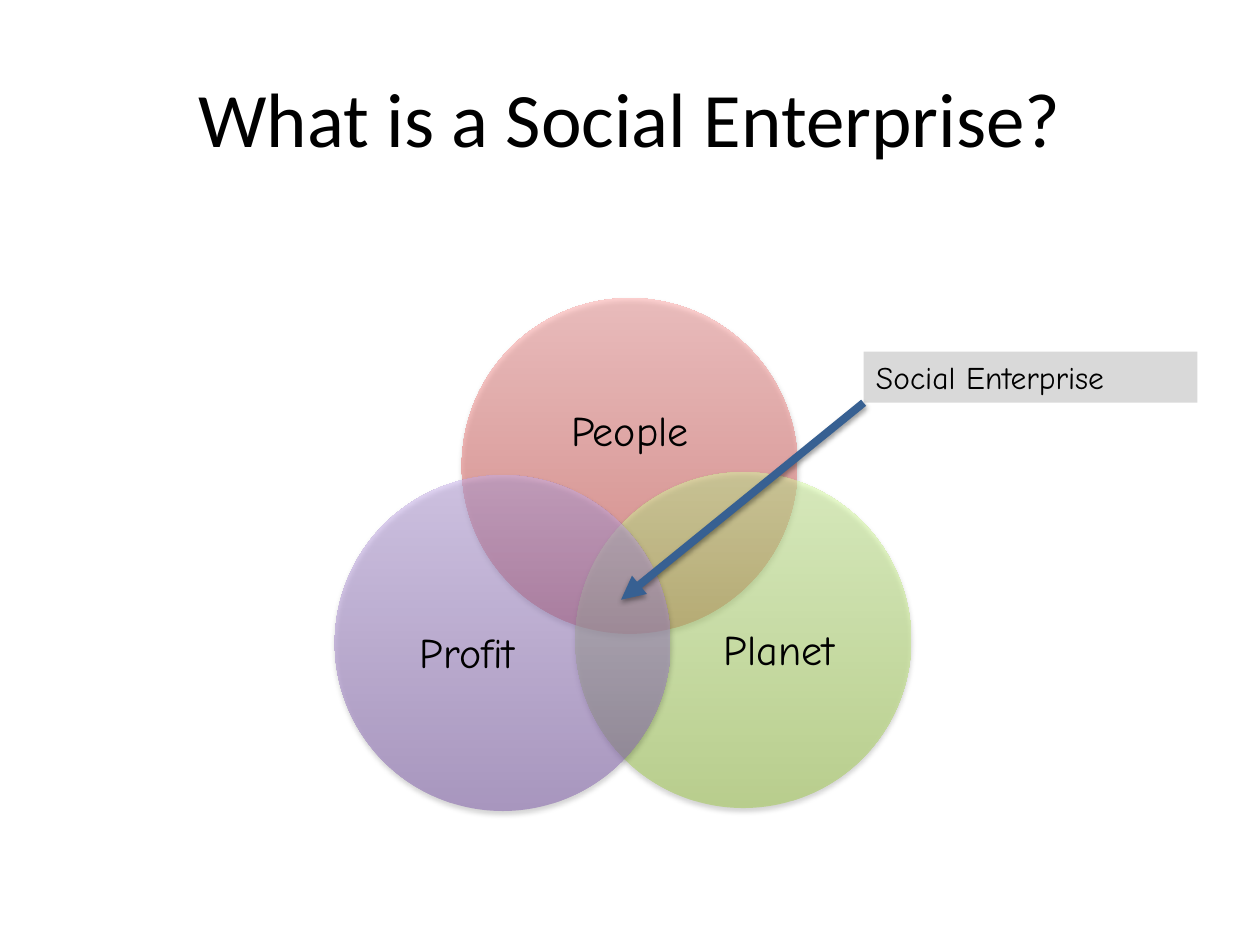
from dataclasses import dataclass

from pptx import Presentation
from pptx.dml.color import RGBColor
from pptx.enum.shapes import MSO_CONNECTOR as Connector, MSO_SHAPE as Shape
from pptx.enum.text import MSO_ANCHOR as Anchor, MSO_AUTO_SIZE as AutoSize, PP_ALIGN as Align
from pptx.oxml import parse_xml
from pptx.oxml.ns import nsdecls
from pptx.util import Cm, Pt

COLORS = {
    "text": "000000",
    "people_dark": "D1403C", "people_light": "FFA6A5",
    "planet_dark": "A0CA4A", "planet_light": "DAFFA5",
    "profit_dark": "7F5BAB", "profit_light": "C8B0ED",
    "callout": "D9D9D9",
    "arrow": "376092",
}
BODY_FONT = "Comic Neue"
DIAMETER = 6.77


@dataclass
class Box:
    left: float
    top: float
    width: float
    height: float

    def lengths(self) -> tuple:
        return Cm(self.left), Cm(self.top), Cm(self.width), Cm(self.height)


@dataclass
class Circle:
    name: str
    left: float
    top: float
    label: Box


# Back to front
CIRCLES = [
    Circle("People", 9.31, 6.01, Box(10.21, 7.2, 4.98, 3.05)),
    Circle("Planet", 11.6, 9.52, Box(13.68, 11.28, 4.06, 3.73)),
    Circle("Profit", 6.75, 9.58, Box(7.39, 11.33, 4.06, 3.73)),
]
CALLOUT = Box(17.41, 7.09, 6.73, 1.03)
CENTER = (12.52, 12.09)


def color(name: str) -> RGBColor:
    return RGBColor.from_string(COLORS[name])


def add_run(paragraph, text: str, size: float, font: str) -> None:
    run = paragraph.add_run()
    run.text = text
    run.font.size = Pt(size)
    run.font.name = font
    run.font.color.rgb = color("text")


def shadow_xml(opacity: int, distance: float):
    return parse_xml(
        f'<a:effectLst {nsdecls("a")}>'
        f'<a:outerShdw blurRad="{Pt(3.1)}" dist="{Pt(distance)}" dir="5400000" rotWithShape="0">'
        f'<a:srgbClr val="000000"><a:alpha val="{opacity * 1000}"/></a:srgbClr>'
        '</a:outerShdw></a:effectLst>')


def add_circle(slide, circle: Circle) -> None:
    box = Box(circle.left, circle.top, DIAMETER, DIAMETER)
    shape = slide.shapes.add_shape(Shape.OVAL, *box.lengths())
    shape.fill.gradient()
    shape.fill.gradient_angle = 90
    for stop, position, tone in zip(shape.fill.gradient_stops, (0, 1), ("dark", "light")):
        stop.position = position
        stop.color.rgb = color(f"{circle.name.lower()}_{tone}")
    for rgb in shape.fill._xPr.iter("{*}srgbClr"):
        rgb.append(parse_xml(f'<a:alpha {nsdecls("a")} val="50000"/>'))
    shape.line.fill.background()
    shape._element.spPr.append(shadow_xml(35, 1.8))


def add_label(slide, circle: Circle) -> None:
    label = slide.shapes.add_textbox(*circle.label.lengths())
    frame = label.text_frame
    frame.word_wrap = True
    frame.vertical_anchor = Anchor.MIDDLE
    frame.margin_left = frame.margin_right = frame.margin_top = frame.margin_bottom = 0
    paragraph = frame.paragraphs[0]
    paragraph.alignment = Align.CENTER
    paragraph.line_spacing = 0.9
    add_run(paragraph, circle.name, 24, BODY_FONT)


def add_callout(slide, box: Box, text: str) -> None:
    callout = slide.shapes.add_textbox(*box.lengths())
    callout.fill.solid()
    callout.fill.fore_color.rgb = color("callout")
    frame = callout.text_frame
    frame.word_wrap = True
    frame.auto_size = AutoSize.SHAPE_TO_FIT_TEXT
    add_run(frame.paragraphs[0], text, 18, BODY_FONT)


def add_arrow(slide, start: tuple[float, float], end: tuple[float, float]) -> None:
    arrow = slide.shapes.add_connector(
        Connector.STRAIGHT, *(Cm(value) for value in start + end))
    arrow.line.color.rgb = color("arrow")
    arrow.line.width = Pt(4.5)
    arrow.line._get_or_add_ln().append(
        parse_xml(f'<a:tailEnd {nsdecls("a")} type="triangle"/>'))
    arrow._element.spPr.append(shadow_xml(38, 1.6))


def main() -> None:
    presentation = Presentation()
    presentation.slide_width, presentation.slide_height = Cm(25.4), Cm(19.05)
    slide = presentation.slides.add_slide(presentation.slide_layouts[5])

    # Title
    title = slide.shapes.title
    title.left, title.top, title.width, title.height = Box(1.27, 0.76, 22.86, 3.18).lengths()
    title.text_frame.vertical_anchor = Anchor.MIDDLE
    heading = title.text_frame.paragraphs[0]
    heading.alignment = Align.CENTER
    add_run(heading, "What is a Social Enterprise?", 44, "Calibri")

    # Venn diagram
    for circle in CIRCLES:
        add_circle(slide, circle)
        add_label(slide, circle)

    # Callout pointing at the shared centre
    add_callout(slide, CALLOUT, "Social Enterprise")
    add_arrow(slide, (CALLOUT.left, CALLOUT.top + CALLOUT.height), CENTER)

    presentation.save("out.pptx")


if __name__ == "__main__":
    main()
